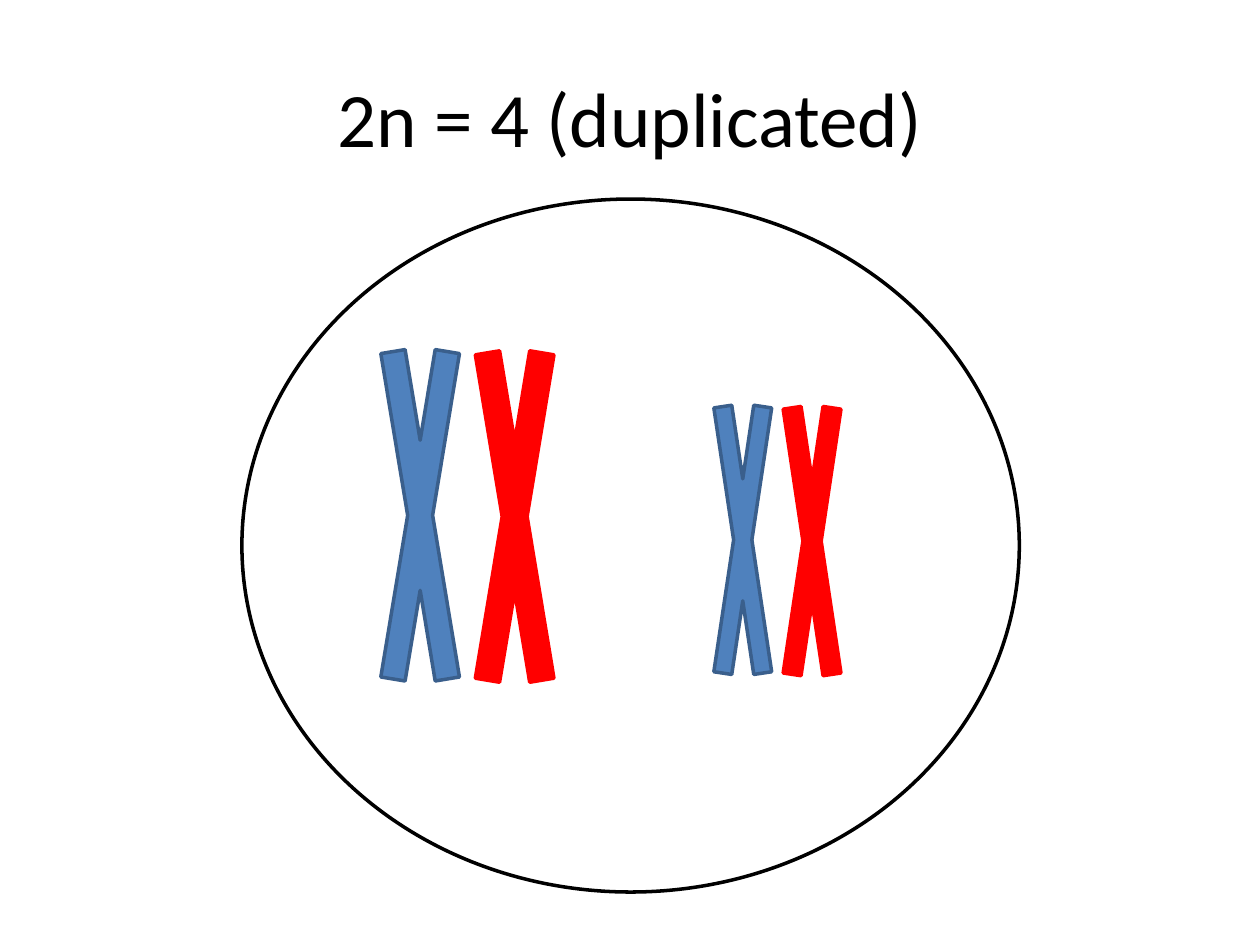
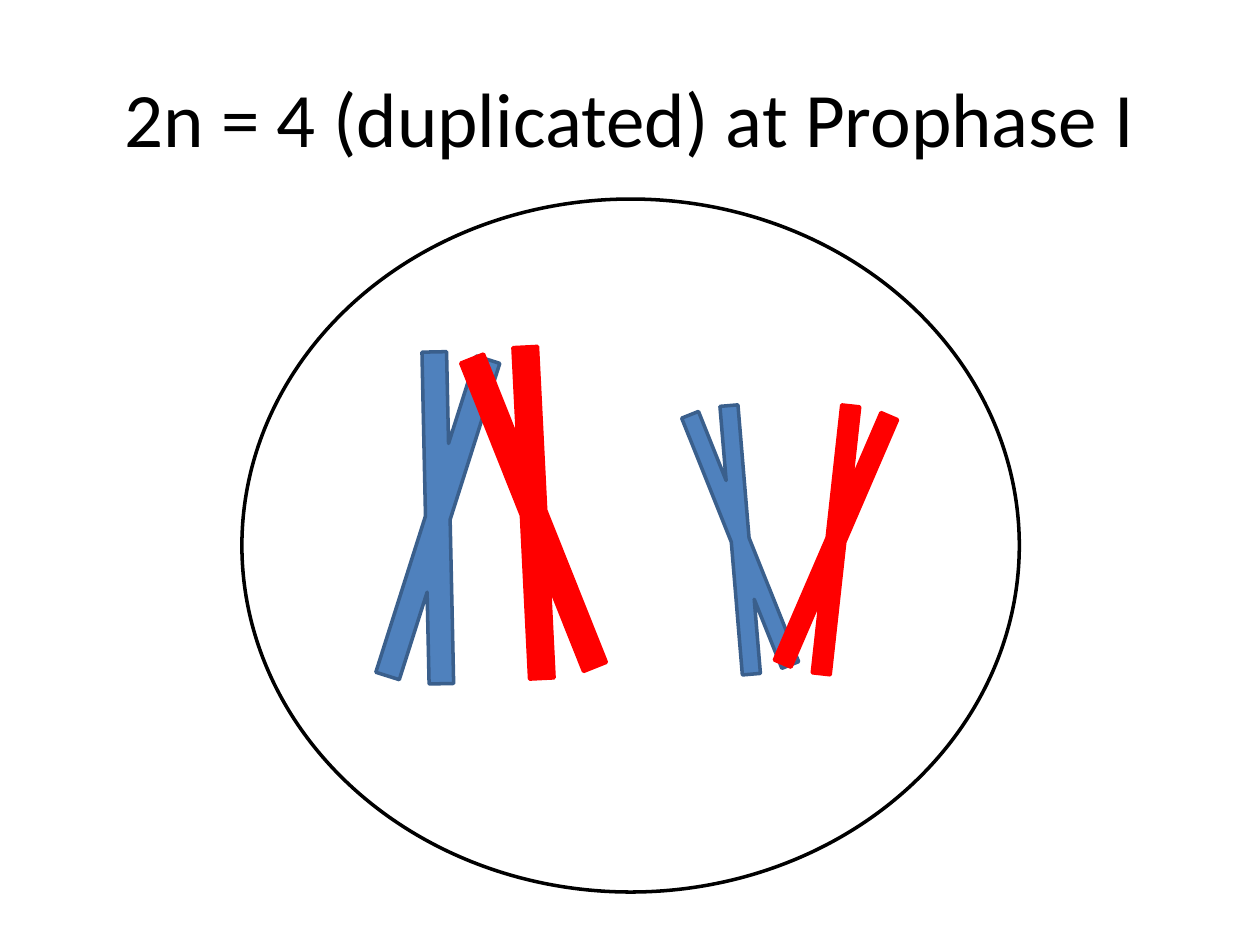
"""Build two slides that show a 2n = 4 cell, duplicated and at Prophase I."""
from pptx import Presentation
from pptx.dml.color import RGBColor
from pptx.enum.shapes import MSO_SHAPE
from pptx.enum.text import MSO_ANCHOR, PP_ALIGN
from pptx.util import Inches, Pt

OVAL, CHROMOSOME = MSO_SHAPE.OVAL, MSO_SHAPE.MATH_MULTIPLY
MIDDLE, CENTER = MSO_ANCHOR.MIDDLE, PP_ALIGN.CENTER

COLORS = {"text": "000000", "blue": "4F81BD", "blue_edge": "3A5F8C", "red": "FF0000"}
FONT, TITLE_SIZE, LINE_WIDTH = "Calibri", 44, 2
TITLE_BOX = (0.5, 0.3, 9, 1.25)
CELL_BOX = (1.92, 1.58, 6.17, 5.5)
SIZES = {"long": (0.83, 5), "short": (0.61, 4.07)}
PARENTS = {"blue": ("blue", "blue_edge"), "red": ("red", "red")}

# Each chromosome: size, parent, left, top, rotation
SLIDES = [
    ("2n = 4 (duplicated)", [
        ("long", "blue", 2.92, 1.59, 0),
        ("long", "red", 3.67, 1.6, 0),
        ("short", "blue", 5.59, 2.25, 0),
        ("short", "red", 6.14, 2.26, 0),
    ]),
    ("2n = 4 (duplicated) at Prophase I", [
        ("long", "blue", 3.06, 1.61, 8.2),
        ("long", "red", 3.82, 1.57, -12.3),
        ("short", "blue", 5.57, 2.25, -13.3),
        ("short", "red", 6.33, 2.25, 14.8),
    ]),
]


def color(name):
    return RGBColor.from_string(COLORS[name])


def add_title(slide, text):
    text_frame = slide.shapes.add_textbox(*map(Inches, TITLE_BOX)).text_frame
    text_frame.word_wrap = True
    text_frame.vertical_anchor = MIDDLE
    text_frame.text = text
    paragraph = text_frame.paragraphs[0]
    paragraph.alignment = CENTER
    font = paragraph.runs[0].font
    font.name, font.size = FONT, Pt(TITLE_SIZE)
    font.color.rgb = color("text")


def add_outlined(slide, kind, box, edge, fill=None):
    shape = slide.shapes.add_shape(kind, *map(Inches, box))
    shape.shadow.inherit = False
    shape.line.color.rgb = color(edge)
    shape.line.width = Pt(LINE_WIDTH)
    if fill:
        shape.fill.solid()
        shape.fill.fore_color.rgb = color(fill)
    else:
        shape.fill.background()
    return shape


def main():
    presentation = Presentation()
    presentation.slide_width, presentation.slide_height = Inches(10), Inches(7.5)
    blank_layout = presentation.slide_layouts[6]
    for title, chromosomes in SLIDES:
        slide = presentation.slides.add_slide(blank_layout)
        add_title(slide, title)
        add_outlined(slide, OVAL, CELL_BOX, "text")
        for size, parent, left, top, rotation in chromosomes:
            fill, edge = PARENTS[parent]
            shape = add_outlined(slide, CHROMOSOME, (left, top, *SIZES[size]), edge, fill)
            shape.rotation = rotation
    presentation.save("out.pptx")


if __name__ == "__main__":
    main()
